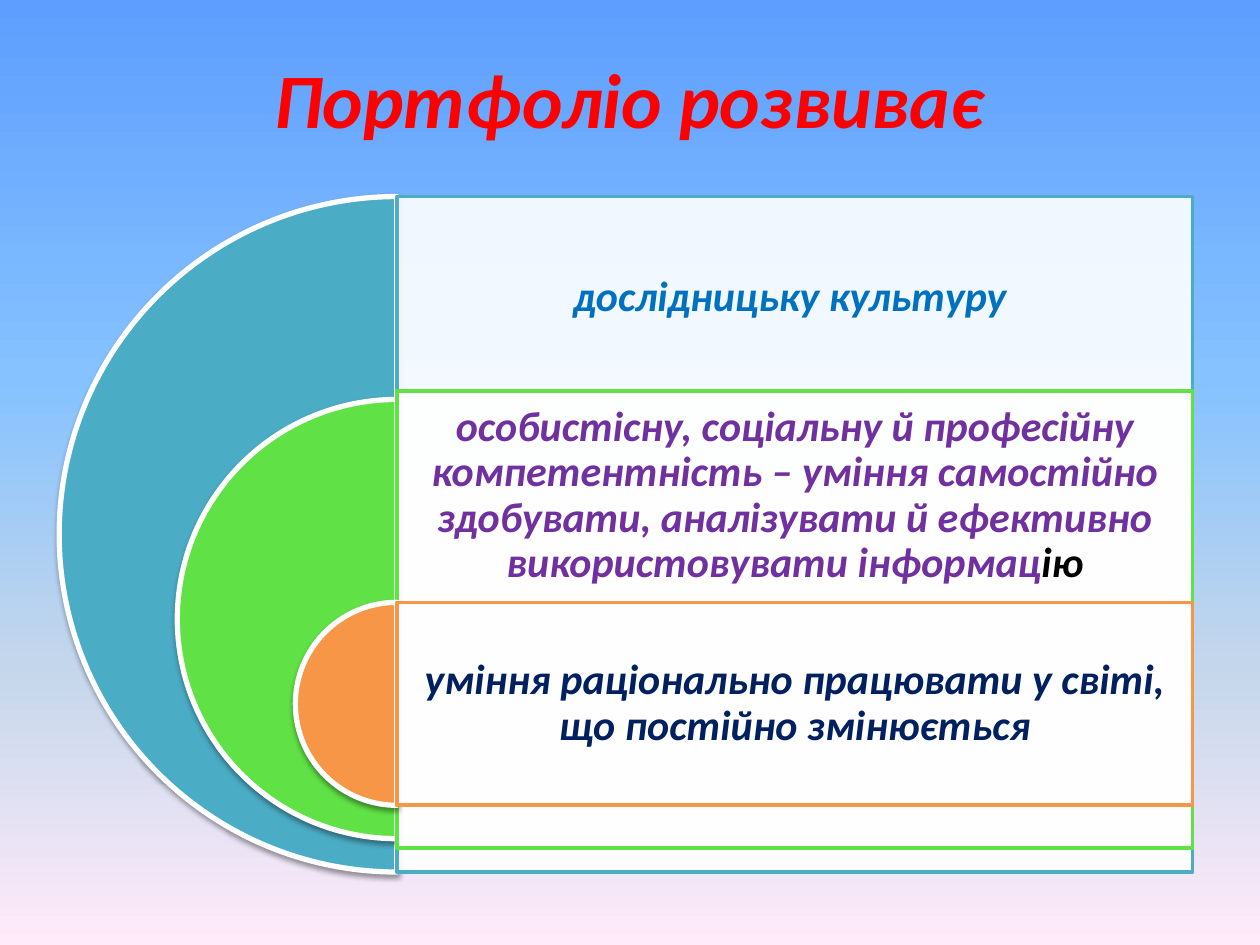
import typing
from dataclasses import dataclass

import lxml.etree
import pptx
import pptx.dml.color
import pptx.enum.shapes
import pptx.enum.text
import pptx.oxml
import pptx.oxml.ns
import pptx.util

Pt = pptx.util.Pt
qn = pptx.oxml.ns.qn


@dataclass(frozen=True)
class Theme:
    font: str = "Calibri"
    title_size: float = 44
    body_size: float = 24
    title: str = "FF0000"
    white: str = "FFFFFF"
    black: str = "000000"
    background: tuple = ((0, "5E9EFF"), (40, "85C2FF"), (70, "C4D6EB"), (100, "FFEBFA"))


@dataclass(frozen=True)
class Layer:
    color: str
    box_top: float
    box_height: float
    text_height: float
    phrases: tuple  # (text, colour) pairs


THEME = Theme()
PIE_CENTER, BOX_WIDTH = 226.8, 454.8
PIE_TOP, PIE_SIZE = 112.3, 386
PIE_TOP_STEP, PIE_SIZE_STEP = 115.95, 135
LAYERS = (
    Layer("4BACC6", 112.3, 386, 115.9, (("дослідницьку культуру ", "0070C0"),)),
    Layer("60E146", 223.3, 261.3, 120.3, (
        ("особистісну, соціальну й професійну компетентність – уміння самостійно "
         "здобувати, аналізувати й ефективно використовувати інформац", "7030A0"),
        ("ію", THEME.black))),
    Layer("F79646", 344.2, 116, 116, (
        ("уміння раціонально працювати у світі, що постійно змінюється", "002060"),)),
)


def rgb(color: str) -> pptx.dml.color.RGBColor:
    return pptx.dml.color.RGBColor.from_string(color)


def add_color(parent: typing.Any, color: str, alpha: typing.Optional[int] = None) -> None:
    node = lxml.etree.SubElement(parent, qn("a:srgbClr"), val=color)
    if alpha is not None:
        lxml.etree.SubElement(node, qn("a:alpha"), val=str(alpha * 1000))


def paint_background(page: typing.Any) -> None:
    fill = page.background.fill
    fill.gradient()
    fill.gradient_angle = 270
    stops = page._element.find(".//" + qn("a:gsLst"))
    for stop in list(stops):
        stops.remove(stop)
    for position, color in THEME.background:
        stop = lxml.etree.SubElement(stops, qn("a:gs"), pos=str(position * 1000))
        add_color(stop, color)


def style_shape(shape: typing.Any, fill: str, line: str, width: float) -> None:
    shape.shadow.inherit = False
    shape.fill.solid()
    shape.fill.fore_color.rgb = rgb(fill)
    shape.line.color.rgb = rgb(line)
    shape.line.width = Pt(width)


def style_run(run: typing.Any, size: float, color: str) -> None:
    run.font.name = THEME.font
    run.font.size = Pt(size)
    run.font.bold = run.font.italic = True
    run.font.color.rgb = rgb(color)


def add_half_circle(page: typing.Any, index: int, layer: Layer) -> None:
    size = PIE_SIZE - index * PIE_SIZE_STEP
    pie = page.shapes.add_shape(
        pptx.enum.shapes.MSO_SHAPE.PIE, Pt(PIE_CENTER - size / 2),
        Pt(PIE_TOP + index * PIE_TOP_STEP), Pt(size), Pt(size))
    pie.adjustments[0], pie.adjustments[1] = 54, 162
    style_shape(pie, layer.color, THEME.white, 3)
    effects = pie._element.spPr.find(qn("a:effectLst"))
    shadow = lxml.etree.SubElement(
        effects, qn("a:outerShdw"), blurRad=str(Pt(3.1)), dist=str(Pt(1.6)),
        dir="5400000", rotWithShape="0")
    add_color(shadow, THEME.black, 38)


def add_panel(page: typing.Any, layer: Layer) -> None:
    panel = page.shapes.add_shape(
        pptx.enum.shapes.MSO_SHAPE.RECTANGLE, Pt(PIE_CENTER), Pt(layer.box_top),
        Pt(BOX_WIDTH), Pt(layer.box_height))
    style_shape(panel, THEME.white, layer.color, 2)
    fill_color = panel._element.spPr.find(qn("a:solidFill")).find(qn("a:srgbClr"))
    lxml.etree.SubElement(fill_color, qn("a:alpha"), val="90000")


def add_label(page: typing.Any, layer: Layer) -> None:
    box = page.shapes.add_textbox(
        Pt(PIE_CENTER), Pt(layer.box_top), Pt(BOX_WIDTH), Pt(layer.text_height))
    frame = box.text_frame
    frame.word_wrap = True
    frame.vertical_anchor = pptx.enum.text.MSO_ANCHOR.MIDDLE
    frame.margin_left = frame.margin_right = Pt(7.2)
    frame.margin_top = frame.margin_bottom = Pt(7.2)
    para = frame.paragraphs[0]
    para.alignment = pptx.enum.text.PP_ALIGN.CENTER
    para.line_spacing = 0.9
    for text, color in layer.phrases:
        span = para.add_run()
        span.text = text
        style_run(span, THEME.body_size, color)


def add_title(page: typing.Any, text: str) -> None:
    title = page.shapes.title
    title.left, title.top, title.width, title.height = Pt(36), Pt(21.6), Pt(648), Pt(68.4)
    title.text_frame.text = text
    title.text_frame.vertical_anchor = pptx.enum.text.MSO_ANCHOR.MIDDLE
    para = title.text_frame.paragraphs[0]
    para.alignment = pptx.enum.text.PP_ALIGN.CENTER
    style_run(para.runs[0], THEME.title_size, THEME.title)


def main() -> None:
    deck = pptx.Presentation()
    deck.slide_width, deck.slide_height = Pt(720), Pt(540)
    page = deck.slides.add_slide(deck.slide_layouts.get_by_name("Title Only"))
    paint_background(page)
    add_title(page, "Портфоліо розвиває")
    # Nested layers, from the outermost to the innermost
    for index, layer in enumerate(LAYERS):
        add_half_circle(page, index, layer)
        add_panel(page, layer)
        add_label(page, layer)
    deck.save("out.pptx")


if __name__ == "__main__":
    main()
